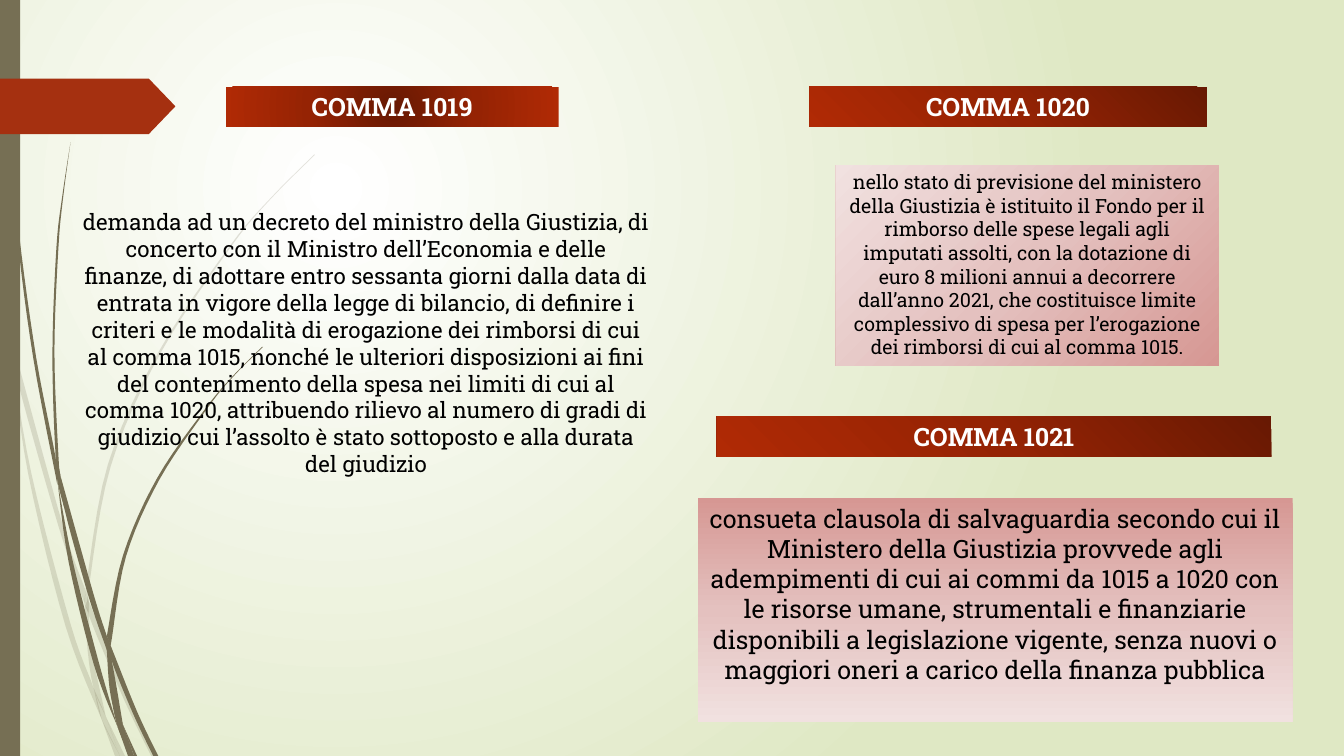
from lxml import etree
from pptx import Presentation
from pptx.dml.color import RGBColor
from pptx.enum.shapes import MSO_SHAPE
from pptx.enum.text import MSO_ANCHOR, PP_ALIGN
from pptx.oxml.ns import qn
from pptx.util import Inches, Pt

FONT = "Roboto Slab"
OLIVE, RUST, WHITE, BLACK = "766F54", "A53010", "FFFFFF", "000000"
RED_STOPS = [(0, "681903"), (50, "952304"), (100, "B02A05")]
PINK_STOPS = [(0, "D69793"), (50, "E4C1BF"), (100, "F1E1E0")]
PAGE_STOPS = [(0, "FFFFFF"), (100, "DFE8C4")]

# Each piece of grass: left edge, then right edge, both from tip to root
PALE_GRASS = [
    ([(0, 2.99), (0.11, 3.5)], [(0, 2.82), (0.09, 3.22), (0.11, 3.5)]),
    ([(0.14, 3.45), (0.17, 3.76), (0.58, 5.22), (0.84, 5.99)],
     [(0.14, 3.45), (0.62, 5.2), (0.85, 5.86)]),
    ([(0.88, 5.96), (0.88, 6.1), (1.23, 6.94), (1.5, 7.5)],
     [(0.88, 5.96), (1.27, 6.92), (1.55, 7.5)]),
    ([(1.05, 7.11), (1.19, 7.5)], [(1.05, 7.11), (1.24, 7.5)]),
    ([(0.11, 3.5), (0.28, 4.7), (0.65, 6.21), (1.01, 7.14)],
     [(0.11, 3.5), (0.31, 4.69), (0.7, 6.19), (0.93, 6.83), (1.01, 7.14)]),
    ([(0.84, 5.99), (0.87, 6.46), (0.93, 6.83), (1.05, 7.11)],
     [(0.84, 5.99), (0.88, 6.1), (0.91, 6.46), (1.05, 7.11)]),
    ([(3.12, 1.53), (2.68, 1.97), (2.28, 2.44), (1.58, 3.48), (1.07, 4.61), (0.85, 5.84)],
     [(3.12, 1.54), (2.68, 1.98), (2.29, 2.45), (1.6, 3.49), (1.1, 4.62), (0.88, 5.84),
      (0.88, 5.96)]),
    ([(1.01, 7.14), (1.14, 7.5)], [(1.01, 7.14), (1.19, 7.5)]),
    ([(0.85, 5.86), (0.84, 5.99), (0.88, 6.08)], [(0.85, 5.86), (0.88, 5.96), (0.88, 6.1)]),
    ([(0.93, 6.83), (1.01, 7.14), (1.19, 7.5)], [(0.93, 6.83), (1.05, 7.11), (1.19, 7.5)]),
]
DARK_GRASS = [
    ([(0.03, 0), (0.07, 1.1), (0.17, 2.33), (0.33, 3.55), (0.57, 4.81)],
     [(0.04, 0), (0.08, 1.09), (0.19, 2.32), (0.36, 3.55), (0.55, 4.53), (0.57, 4.81)]),
    ([(0.6, 4.72), (0.64, 5.05), (0.88, 5.92), (1.06, 6.45)],
     [(0.6, 4.72), (0.93, 5.9), (1.06, 6.31)]),
    ([(1.1, 6.41), (1.11, 6.56), (1.32, 7.08), (1.52, 7.5)],
     [(1.1, 6.41), (1.36, 7.06), (1.57, 7.5)]),
    ([(0.57, 4.77), (0.68, 5.57), (0.93, 6.59), (1.17, 7.22)],
     [(0.57, 4.77), (0.72, 5.56), (0.98, 6.57), (1.17, 7.22)]),
    ([(0.7, 1.41), (0.62, 1.93), (0.56, 2.45), (0.52, 3.49), (0.55, 4.49), (0.6, 4.72)],
     [(0.7, 1.41), (0.63, 1.93), (0.58, 2.45), (0.54, 3.49), (0.58, 4.53), (0.6, 4.72)]),
    ([(1.22, 7.19), (1.33, 7.5)], [(1.22, 7.19), (1.36, 7.5)]),
    ([(0.55, 4.49), (0.57, 4.77), (0.64, 5.05)], [(0.55, 4.49), (0.6, 4.72), (0.64, 5.05)]),
    ([(2.6, 3.44), (2.31, 3.73), (2.04, 4.05), (1.56, 4.74), (1.22, 5.51), (1.06, 6.31)],
     [(2.61, 3.44), (2.31, 3.74), (2.05, 4.06), (1.58, 4.76), (1.25, 5.52), (1.11, 6.33),
      (1.1, 6.41)]),
    ([(1.17, 7.22), (1.27, 7.5)], [(1.17, 7.22), (1.31, 7.5)]),
    ([(1.06, 6.45), (1.1, 6.91), (1.22, 7.19)], [(1.06, 6.45), (1.11, 6.56), (1.22, 7.19)]),
    ([(1.06, 6.31), (1.06, 6.45), (1.11, 6.56)], [(1.06, 6.31), (1.1, 6.41), (1.11, 6.56)]),
    ([(1.1, 6.91), (1.17, 7.22), (1.3, 7.5)], [(1.1, 6.91), (1.22, 7.19), (1.33, 7.5)]),
]

TEXT_1019 = (
    "demanda ad un decreto del ministro della Giustizia, di concerto con il Ministro "
    "dell’Economia e delle finanze, di adottare entro sessanta giorni dalla data di entrata "
    "in vigore della legge di bilancio, di definire i criteri e le modalità di erogazione dei "
    "rimborsi di cui al comma 1015, nonché le ulteriori disposizioni ai fini del contenimento "
    "della spesa nei limiti di cui al comma 1020, attribuendo rilievo al numero di gradi di "
    "giudizio cui l’assolto è stato sottoposto e alla durata del giudizio")
TEXT_1020 = (
    "nello stato di previsione del ministero della Giustizia è istituito il Fondo per il "
    "rimborso delle spese legali agli imputati assolti, con la dotazione di euro 8 milioni "
    "annui a decorrere dall’anno 2021, che costituisce limite complessivo di spesa per "
    "l’erogazione dei rimborsi di cui al comma 1015.")
TEXT_1021 = (
    "consueta clausola di salvaguardia secondo cui il Ministero della Giustizia provvede agli "
    "adempimenti di cui ai commi da 1015 a 1020 con le risorse umane, strumentali e finanziarie "
    "disponibili a legislazione vigente, senza nuovi o maggiori oneri a carico della finanza "
    "pubblica")


def color(value):
    return RGBColor.from_string(value)


def apply_gradient(parent, stops, angle=None, focus=None):
    """Replace the solid fill in parent by a linear or a circular gradient."""
    gradient = etree.Element(qn("a:gradFill"), rotWithShape="1")
    stop_list = etree.SubElement(gradient, qn("a:gsLst"))
    for position, value in stops:
        stop = etree.SubElement(stop_list, qn("a:gs"), pos=str(position * 1000))
        etree.SubElement(stop, qn("a:srgbClr"), val=value)
    if focus:
        circle = etree.SubElement(gradient, qn("a:path"))
        circle.set("path", "circle")
        sides = {side: str(share * 1000) for side, share in zip("ltrb", focus)}
        etree.SubElement(circle, qn("a:fillToRect"), **sides)
    else:
        etree.SubElement(gradient, qn("a:lin"), ang=str(angle * 60000), scaled="0")
    parent.replace(parent.find(qn("a:solidFill")), gradient)


def paint(shape, value):
    shape.shadow.inherit = False
    shape.fill.solid()
    shape.fill.fore_color.rgb = color(value)
    shape.line.fill.background()


def add_block(slide, kind, box, value):
    shape = slide.shapes.add_shape(kind, *map(Inches, box))
    paint(shape, value)
    return shape


def write_text(shape, text, size, value, bold=False):
    frame = shape.text_frame
    frame.word_wrap = True
    frame.vertical_anchor = MSO_ANCHOR.TOP
    paragraph = frame.paragraphs[0]
    paragraph.text = text
    paragraph.alignment = PP_ALIGN.CENTER
    paragraph.font.name = FONT
    paragraph.font.size = Pt(size)
    paragraph.font.bold = bold
    paragraph.font.color.rgb = color(value)


def add_panel(slide, box, text, size, value, stops, angle=None, focus=None, bold=False):
    shape = add_block(slide, MSO_SHAPE.RECTANGLE, box, stops[0][1])
    apply_gradient(shape._element.spPr, stops, angle, focus)
    write_text(shape, text, size, value, bold)


def add_banner(slide, left, top, width, text, angle=None, focus=None):
    add_panel(slide, (left, top, width, 0.4), text, 18, WHITE, RED_STOPS, angle, focus, True)


def smooth(points, steps=6):
    """Run a Catmull-Rom curve through the points."""
    padded = [points[0], *points, points[-1]]
    curve = []
    for a, b, c, d in zip(padded, padded[1:], padded[2:], padded[3:]):
        for step in range(steps):
            t = step / steps
            curve.append(tuple(
                (2 * q + (r - p) * t + (2 * p - 5 * q + 4 * r - s) * t ** 2
                 + (3 * q - p - 3 * r + s) * t ** 3) / 2
                for p, q, r, s in zip(a, b, c, d)))
    return curve + [points[-1]]


def add_blade(slide, left_edge, right_edge, opacity):
    outline = [(Inches(x), Inches(y)) for x, y in smooth(left_edge) + smooth(right_edge)[::-1]]
    builder = slide.shapes.build_freeform(*outline[0])
    builder.add_line_segments(outline[1:], close=True)
    shape = builder.convert_to_shape()
    paint(shape, OLIVE)
    if opacity < 100:
        fill_color = shape._element.spPr.find(qn("a:solidFill"))[0]
        etree.SubElement(fill_color, qn("a:alpha"), val=str(opacity * 1000))


def main():
    presentation = Presentation()
    presentation.slide_width = Inches(13.33)
    presentation.slide_height = Inches(7.5)
    slide = presentation.slides.add_slide(presentation.slide_layouts[6])

    # Background
    slide.background.fill.solid()
    apply_gradient(slide._element.find(".//" + qn("p:bgPr")), PAGE_STOPS,
                   focus=(50, 50, 100, 100))

    # Grass, side bar and arrow
    for pieces, opacity in ((PALE_GRASS, 20), (DARK_GRASS, 100)):
        for left_edge, right_edge in pieces:
            add_blade(slide, left_edge, right_edge, opacity)
    add_block(slide, MSO_SHAPE.RECTANGLE, (0, 0, 0.2, 7.5), OLIVE)
    arrow = add_block(slide, MSO_SHAPE.PENTAGON, (0, 0.78, 1.74, 0.55), RUST)
    arrow.adjustments[0] = 0.48

    # Comma 1020
    add_banner(slide, 8.03, 0.86, 3.94, "COMMA 1020", angle=135)
    add_panel(slide, (8.29, 1.64, 3.8, 1.99), TEXT_1020, 14, BLACK, PINK_STOPS, angle=225)

    # Comma 1019
    add_banner(slide, 2.24, 0.86, 3.3, "COMMA 1019", focus=(50, 50, 50, 50))
    text_box = slide.shapes.add_textbox(*map(Inches, (0.72, 2.02, 5.82, 3.06)))
    write_text(text_box, TEXT_1019, 16, BLACK)

    # Comma 1021
    add_banner(slide, 7.11, 4.13, 5.5, "COMMA 1021", angle=135)
    add_panel(slide, (6.92, 4.94, 5.9, 2.22), TEXT_1021, 18, BLACK, PINK_STOPS, angle=90)

    presentation.save("out.pptx")


if __name__ == "__main__":
    main()
